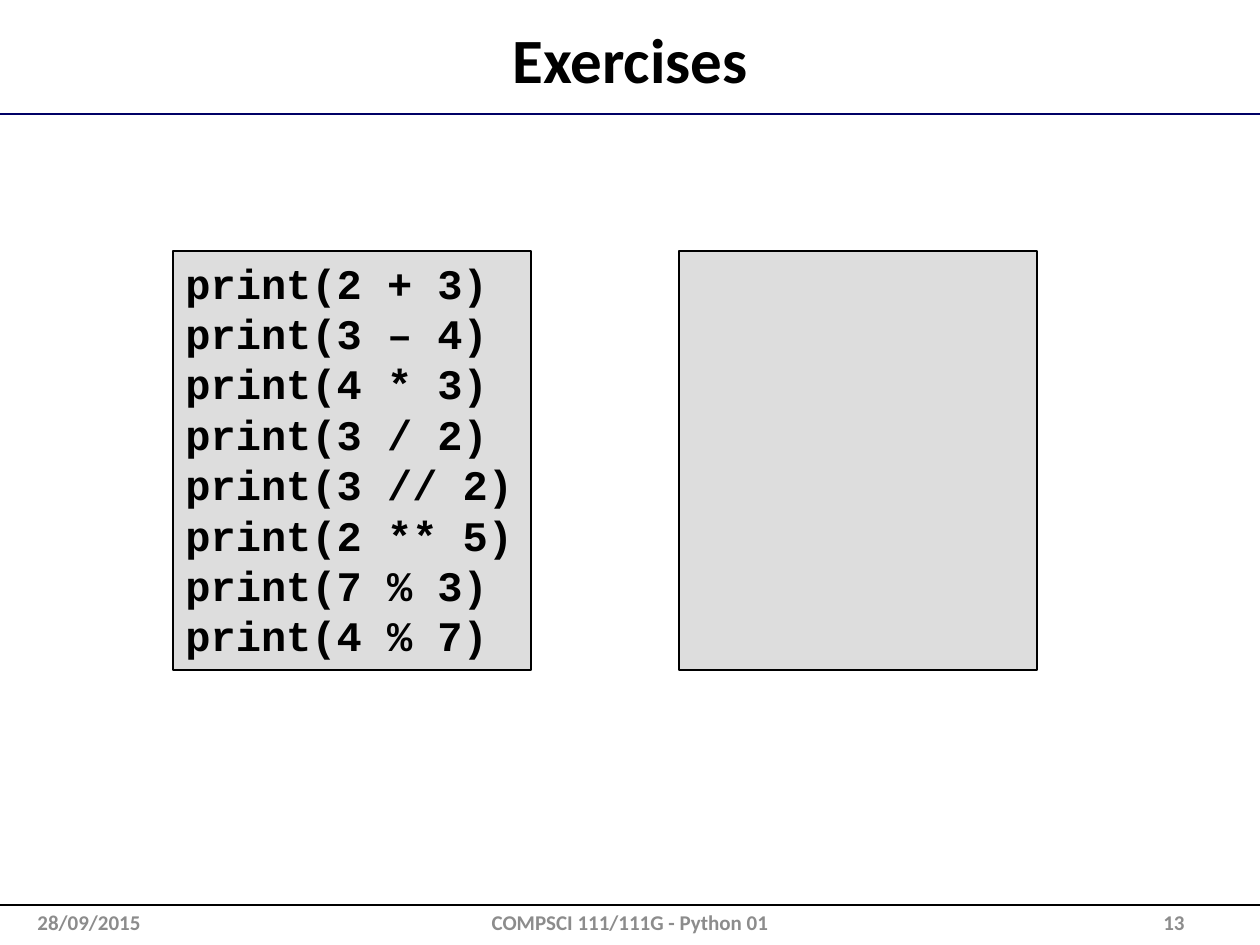
from pptx import Presentation
from pptx.dml.color import RGBColor
from pptx.enum.shapes import MSO_CONNECTOR, MSO_SHAPE
from pptx.enum.text import MSO_ANCHOR as Anchor, PP_ALIGN as Align
from pptx.util import Pt
from lxml import etree

PX = 914400 // 126  # EMU in one px
WIDTH, HEIGHT = 1260, 945
DRAWING_NS = "http://schemas.openxmlformats.org/drawingml/2006/main"

CODE_LINES = [
    "print(2 + 3)",
    "print(3 – 4)",
    "print(4 * 3)",
    "print(3 / 2)",
    "print(3 // 2)",
    "print(2 ** 5)",
    "print(7 % 3)",
    "print(4 % 7)",
]


def px(*lengths):
    return [length * PX for length in lengths]


def color(hex_string):
    return RGBColor.from_string(hex_string)


def format_text(text_frame, font_name, size, hex_string, align, anchor):
    text_frame.word_wrap = True
    text_frame.vertical_anchor = anchor
    for paragraph in text_frame.paragraphs:
        paragraph.alignment = align
        for run in paragraph.runs:
            run.font.name = font_name
            run.font.size = Pt(size)
            run.font.bold = True
            run.font.color.rgb = color(hex_string)


def add_rule(slide, y, hex_string):
    line = slide.shapes.add_connector(
        MSO_CONNECTOR.STRAIGHT, *px(0, y, WIDTH, y))
    line.line.color.rgb = color(hex_string)
    line.line.width = Pt(1)
    etree.SubElement(line._element.spPr, f"{{{DRAWING_NS}}}effectLst")


def add_header(slide, left, top, width, height):
    add_rule(slide, top + height, "000066")
    title = slide.shapes.title
    title.left, title.top, title.width, title.height = px(
        left + 13, top + 15, width - 26, 87)
    title.text_frame.text = "Exercises"
    format_text(title.text_frame, "Calibri", 36, "000000",
                Align.CENTER, Anchor.MIDDLE)


def add_panel(slide, left, top, width, height, lines=()):
    panel = slide.shapes.add_shape(
        MSO_SHAPE.RECTANGLE, *px(left, top, width, height))
    panel.shadow.inherit = False
    panel.fill.solid()
    panel.fill.fore_color.rgb = color("DDDDDD")
    panel.line.color.rgb = color("000000")
    panel.line.width = Pt(0.75)
    if lines:
        panel.text_frame.text = "\n".join(lines)
        format_text(panel.text_frame, "Courier New", 24, "000000",
                    Align.LEFT, Anchor.TOP)


def add_footer(slide, left, top, width, height):
    add_rule(slide, top, "000000")
    side_width, center_width = 294, 400
    parts = [
        ("28/09/2015", left + 25, side_width, Align.LEFT),
        ("COMPSCI 111/111G - Python 01",
         left + (width - center_width) // 2, center_width, Align.CENTER),
        ("13", left + width - 63 - side_width, side_width, Align.RIGHT),
    ]
    for text, x, part_width, align in parts:
        box = slide.shapes.add_textbox(*px(x, top, part_width, height))
        box.text_frame.text = text
        format_text(box.text_frame, "Calibri", 12, "8C8C8C",
                    align, Anchor.MIDDLE)


def main():
    presentation = Presentation()
    presentation.slide_width, presentation.slide_height = px(WIDTH, HEIGHT)
    title_only = presentation.slide_layouts[5]
    slide = presentation.slides.add_slide(title_only)

    add_header(slide, 0, 0, WIDTH, 114)
    # Code on the left, empty answer box on the right
    add_panel(slide, 173, 251, 358, 419, CODE_LINES)
    add_panel(slide, 679, 251, 358, 419)
    add_footer(slide, 0, 905, WIDTH, 34)

    presentation.save("out.pptx")


if __name__ == "__main__":
    main()
